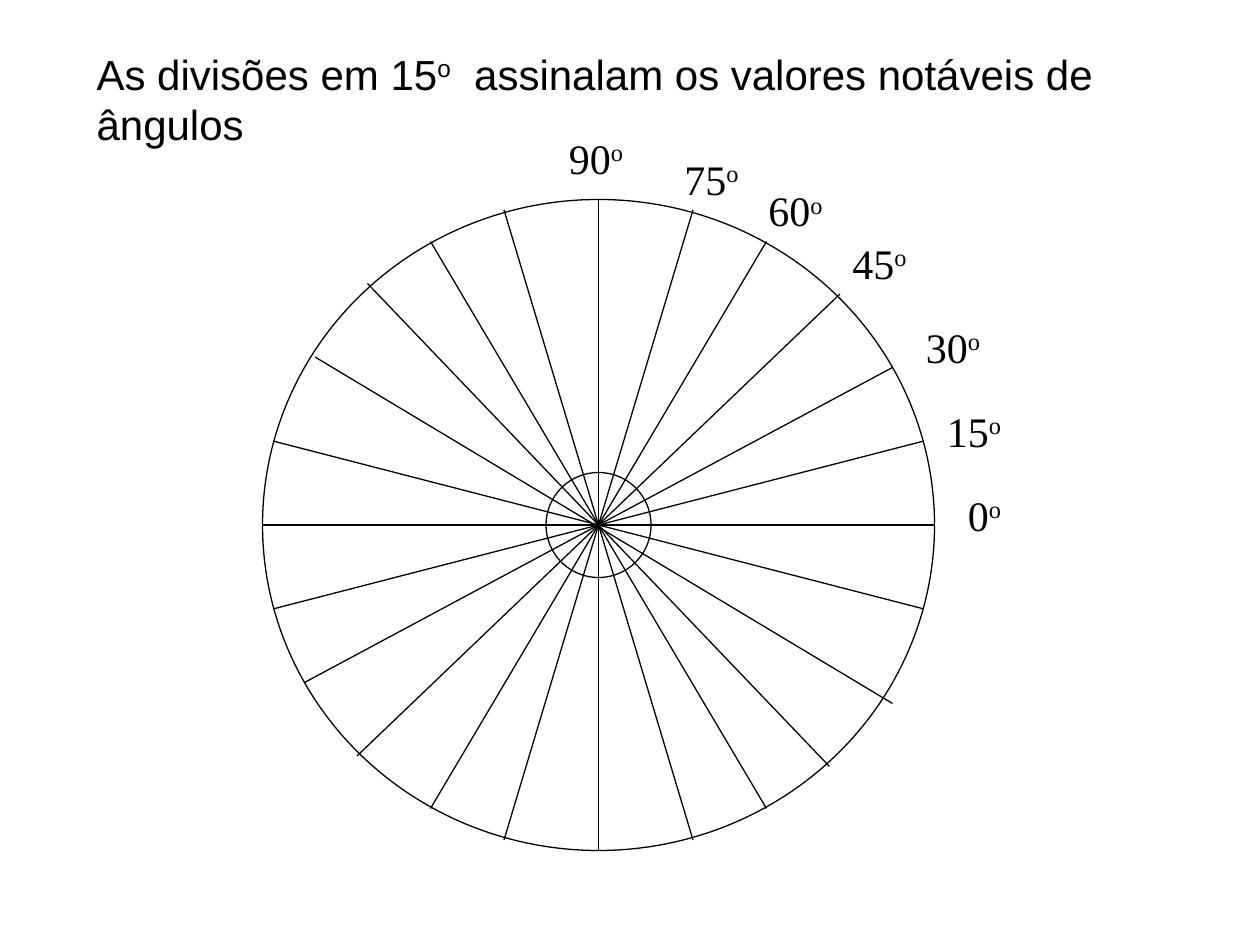
from lxml.etree import SubElement
from pptx import Presentation
from pptx.dml.color import RGBColor
from pptx.enum.shapes import MSO_CONNECTOR, MSO_SHAPE
from pptx.enum.text import MSO_ANCHOR, MSO_AUTO_SIZE, PP_ALIGN
from pptx.oxml.ns import qn
from pptx.util import Pt

BLACK = "000000"
TITLE = ["As divisões em 15", "  assinalam os valores notáveis de ângulos"]
TITLE_BOX = (48, 24, 589, 65)
LABEL_SIZE = (54, 36)
CENTER = (342, 300)
RADII = [(192, 186), (30, 30)]  # horizontal and vertical, outer then inner

# Diameters: (x1, y1, x2, y2)
DIAMETERS = [
    (150, 300, 534, 300),
    (156, 348, 528, 252),
    (174, 390, 510, 210),
    (204, 432, 480, 168),
    (246, 462, 438, 138),
    (288, 480, 396, 120),
    (342, 486, 342, 114),
    (288, 120, 396, 480),
    (246, 138, 438, 462),
    (210, 162, 474, 438),
    (180, 204, 510, 402),
    (156, 252, 528, 348),
]

# Angle: left and top of its label
LABELS = {
    0: (546, 276),
    15: (534, 228),
    30: (522, 180),
    45: (480, 132),
    60: (432, 102),
    75: (384, 84),
    90: (318, 72),
}


def color(hex_code):
    return RGBColor.from_string(hex_code)


def style_line(shape):
    shape.line.color.rgb = color(BLACK)
    shape.line.width = Pt(0.75)


def write(tf, parts, font, size=24):
    """Write the parts with a raised degree sign after the first one."""
    tf.word_wrap = True
    tf.auto_size = MSO_AUTO_SIZE.NONE
    tf.vertical_anchor = MSO_ANCHOR.TOP
    p = tf.paragraphs[0]
    p.alignment = PP_ALIGN.LEFT
    p.line_spacing = 1.0
    p.space_before = Pt(0)
    for i, text in enumerate([parts[0], "o", *parts[1:]]):
        r = p.add_run()
        r.text = text
        r.font.name = font
        r.font.size = Pt(size)
        r.font.color.rgb = color(BLACK)
        if i == 1:
            r._r.get_or_add_rPr().set("baseline", "30000")


def add_circle(s, rx, ry):
    cx, cy = CENTER
    circle = s.shapes.add_shape(
        MSO_SHAPE.OVAL, Pt(cx - rx), Pt(cy - ry), Pt(2 * rx), Pt(2 * ry))
    circle.shadow.inherit = False
    circle.fill.background()
    style_line(circle)


def add_diameter(s, ends):
    line = s.shapes.add_connector(MSO_CONNECTOR.STRAIGHT, *map(Pt, ends))
    style_line(line)
    SubElement(line._element.spPr, qn("a:effectLst"))


def main():
    prs = Presentation()
    prs.slide_width, prs.slide_height = Pt(720), Pt(540)
    s = prs.slides.add_slide(prs.slide_layouts[5])

    title = s.shapes.title
    title.left, title.top, title.width, title.height = map(Pt, TITLE_BOX)
    write(title.text_frame, TITLE, "Arial")

    for rx, ry in RADII:
        add_circle(s, rx, ry)
    for ends in DIAMETERS:
        add_diameter(s, ends)
    for angle, corner in LABELS.items():
        box = s.shapes.add_textbox(*map(Pt, corner + LABEL_SIZE))
        write(box.text_frame, [str(angle)], "Times New Roman")

    prs.save("out.pptx")


if __name__ == "__main__":
    main()
